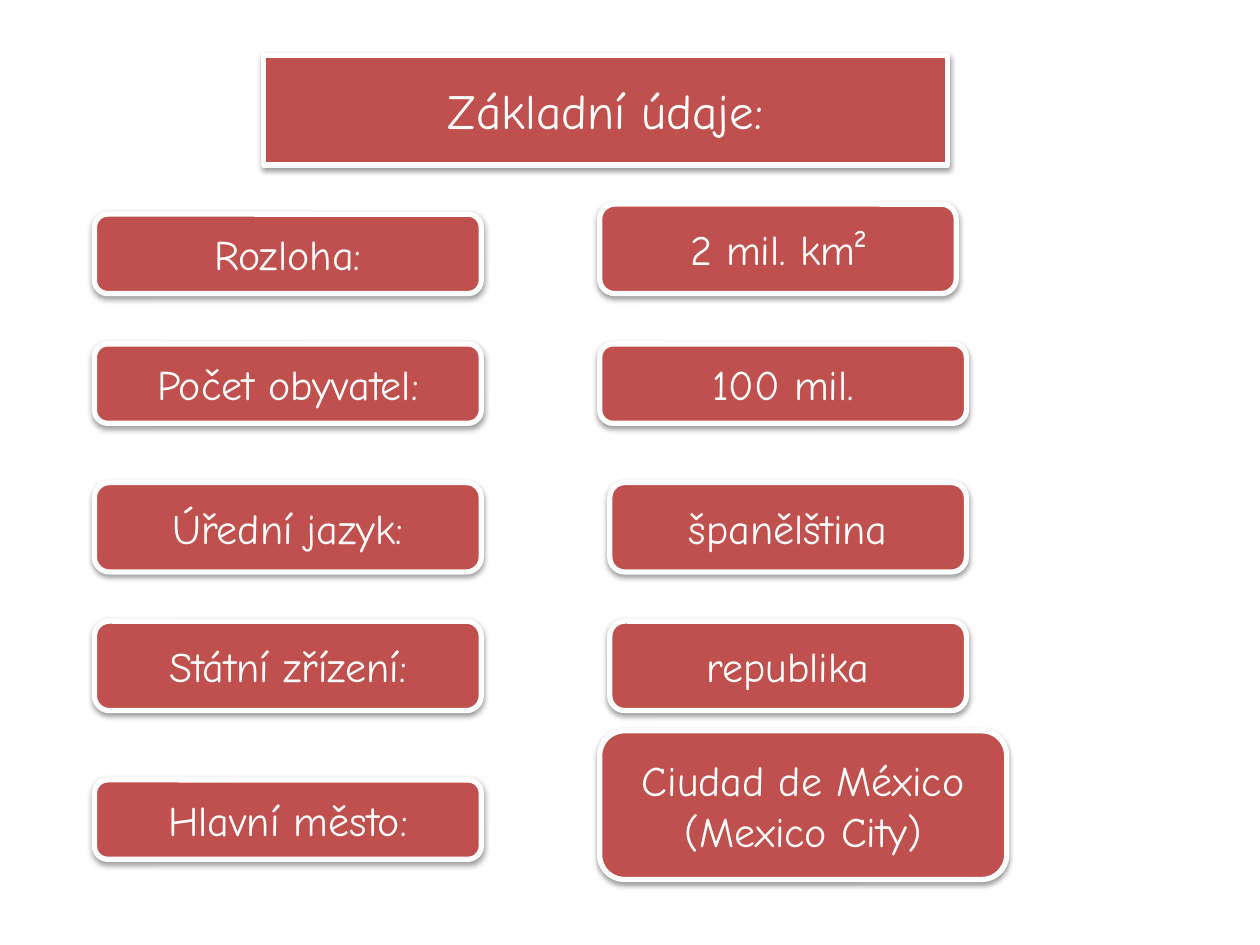
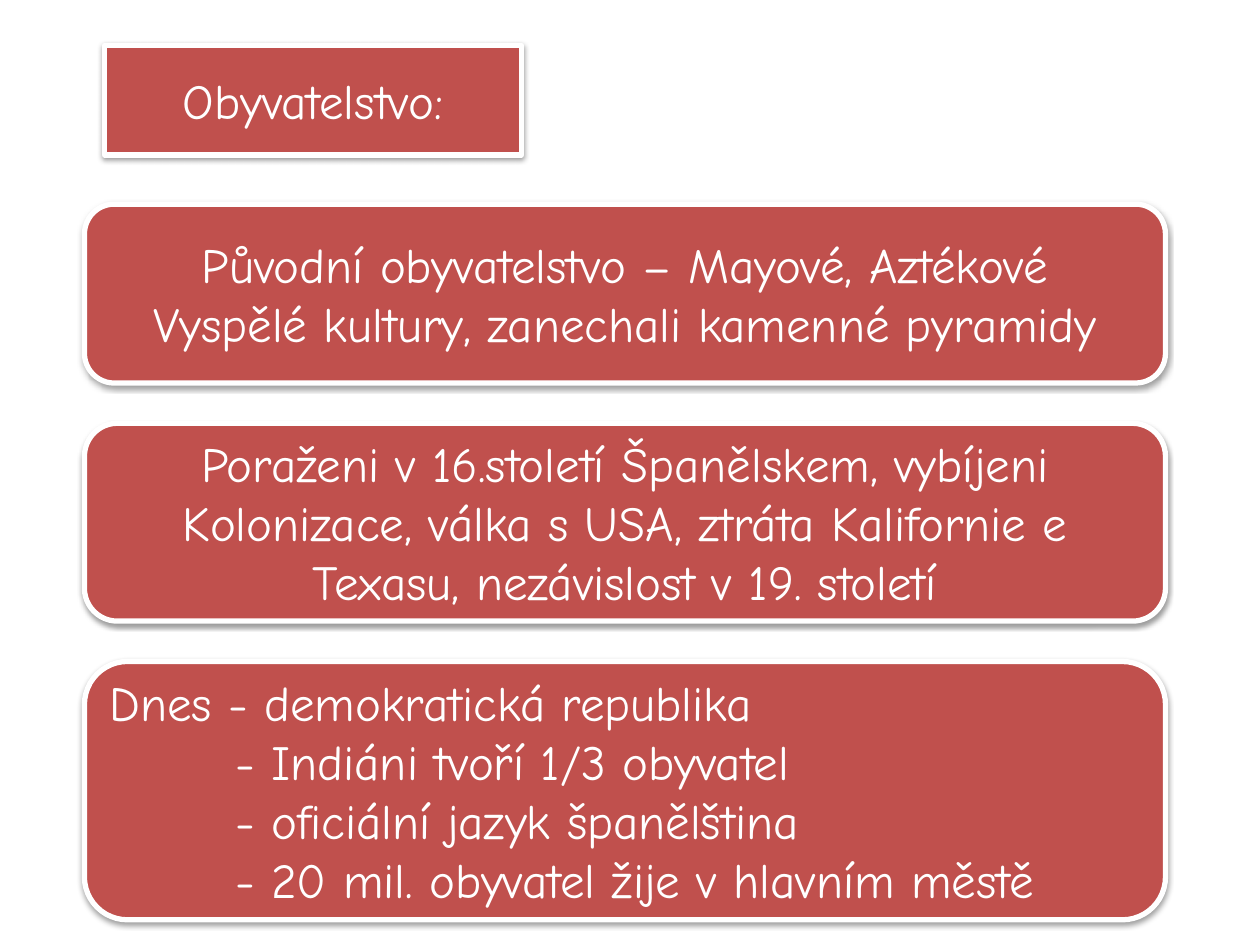
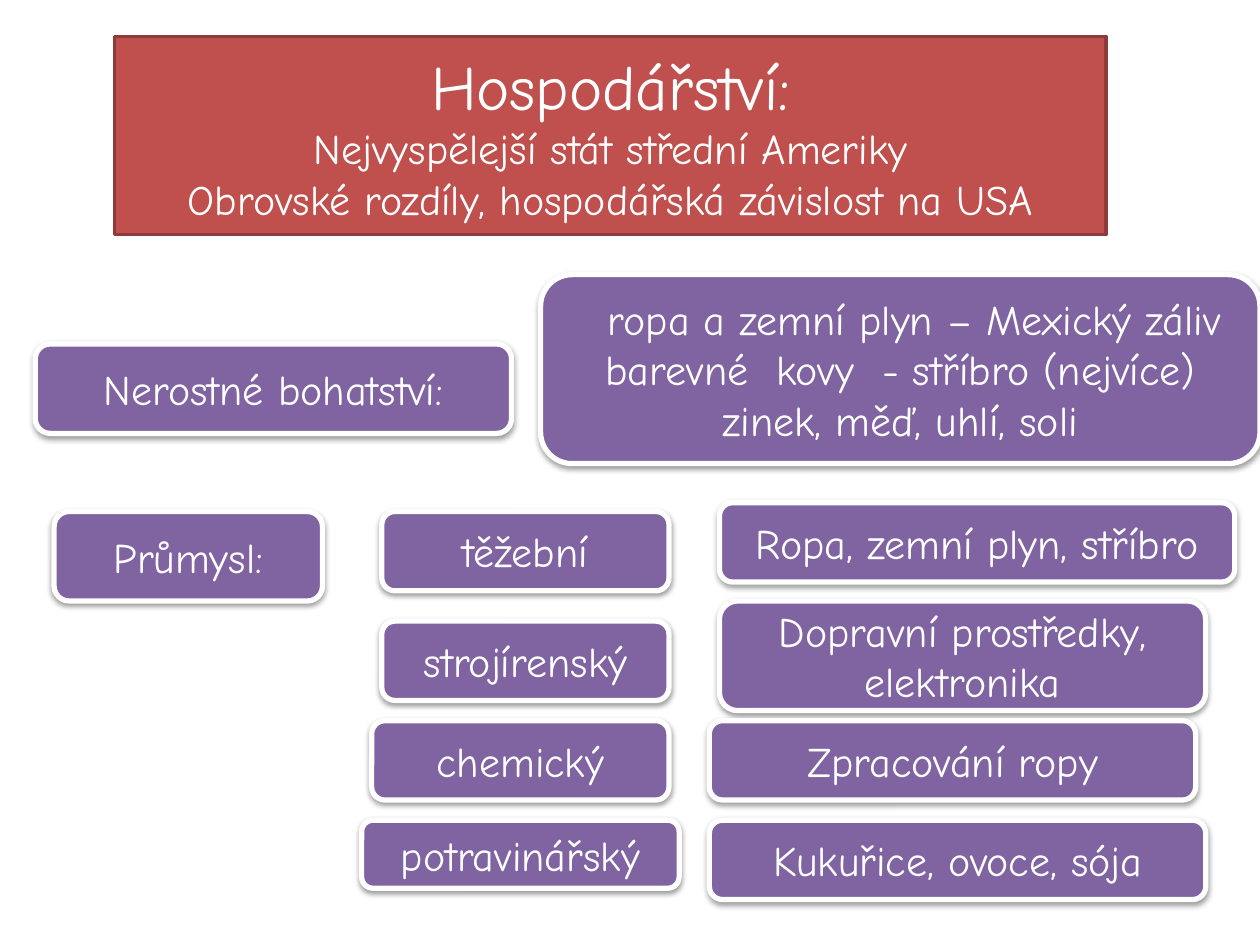
"""Build three slides of rounded cards about the geography of Mexico."""
import lxml.etree
import pptx
import pptx.dml.color
import pptx.enum.shapes
import pptx.enum.text
import pptx.oxml.ns
import pptx.util

Inches, Pt = pptx.util.Inches, pptx.util.Pt
qn = pptx.oxml.ns.qn
CENTER, LEFT = pptx.enum.text.PP_ALIGN.CENTER, pptx.enum.text.PP_ALIGN.LEFT

FONT = "Comic Neue"
RED, PURPLE, WHITE, DARK_RED = "C0504D", "8064A2", "FFFFFF", "8E3B39"
LABEL_SIZE, HEADING_SIZE, LEAD_SIZE = 24, 28, 36

FACTS_TITLE = ("Základní údaje:", (2.09, 0.44, 5.43, 0.87))
LABEL_LEFT, LABEL_WIDTH = 0.75, 3.07
FACTS = [
    ("Rozloha:", 1.7, 0.63, "2 mil. km²", (4.76, 1.62, 2.83, 0.71)),
    ("Počet obyvatel:", 2.73, 0.63, "100 mil.", (4.76, 2.73, 2.91, 0.63)),
    ("Úřední jazyk:", 3.83, 0.71, "španělština", (4.84, 3.83, 2.83, 0.71)),
    ("Státní zřízení:", 4.93, 0.71, "republika", (4.84, 4.93, 2.83, 0.71)),
    ("Hlavní město:", 6.19, 0.63, "Ciudad de México\n(Mexico City)", (4.76, 5.8, 3.23, 1.18)),
]

PEOPLE_TITLE = ("Obyvatelstvo:", (0.83, 0.36, 3.31, 0.87))
ERA_LEFT, ERA_WIDTH, ERA_GAP, ERA_TOP = 0.67, 8.58, 0.32, 1.62
HISTORY = [
    ("Původní obyvatelstvo – Mayové, Aztékové\n"
     "Vyspělé kultury, zanechali kamenné pyramidy", 1.42, {}),
    ("Poraženi v 16.století Španělskem, vybíjeni\n"
     "Kolonizace, válka s USA, ztráta Kalifornie e Texasu, nezávislost v 19. století", 1.57, {}),
    ("Dnes - demokratická republika\n"
     "- Indiáni tvoří 1/3 obyvatel\n"
     "- oficiální jazyk španělština\n"
     "- 20 mil. obyvatel žije v hlavním městě", 2.05, {"align": LEFT, "later_margin": 1}),
]

ECONOMY_TITLE = ("Hospodářství:\n"
                 "Nejvyspělejší stát střední Ameriky\n"
                 "Obrovské rozdíly, hospodářská závislost na USA", (0.91, 0.29, 7.87, 1.57))
RESOURCES = ("Nerostné bohatství:", (0.28, 2.73, 3.78, 0.71))
MINERALS = ("ropa a zemní plyn – Mexický záliv barevné  kovy  - stříbro (nejvíce)\n"
            "zinek, měď, uhlí, soli", (4.29, 2.18, 5.71, 1.5))
INDUSTRY = ("Průmysl:", (0.43, 4.06, 2.13, 0.71))
BRANCHES = [
    ("těžební", (3.03, 4.06, 2.28, 0.63)),
    ("Ropa, zemní plyn, stříbro", (5.71, 3.99, 4.09, 0.63)),
    ("strojírenský", (3.03, 4.93, 2.28, 0.63)),
    ("Dopravní prostředky, elektronika", (5.71, 4.77, 3.86, 0.87)),
    ("chemický", (2.95, 5.72, 2.36, 0.63)),
    ("Zpracování ropy", (5.63, 5.72, 3.86, 0.63)),
    ("potravinářský", (2.87, 6.51, 2.52, 0.54)),
    ("Kukuřice, ovoce, sója", (5.63, 6.51, 3.94, 0.63)),
]


def rgb(value):
    """Turn a hex string into a colour."""
    return pptx.dml.color.RGBColor.from_string(value)


def cast_shadow(card):
    """Give a card a soft shadow straight below it."""
    effects = card._element.spPr.find(qn("a:effectLst"))
    shadow = lxml.etree.SubElement(effects, qn("a:outerShdw"), blurRad="40000", dist="20000",
                                   dir="5400000", rotWithShape="0")
    colour = lxml.etree.SubElement(shadow, qn("a:srgbClr"), val="000000")
    lxml.etree.SubElement(colour, qn("a:alpha"), val="38000")


def paint(card, fill, border=WHITE, border_width=3):
    """Fill and outline a card; white borders come with a shadow."""
    card.fill.solid()
    card.fill.fore_color.rgb = rgb(fill)
    card.line.color.rgb = rgb(border)
    card.line.width = Pt(border_width)
    card.shadow.inherit = False
    if border == WHITE:
        cast_shadow(card)


def write(card, text, size, first_size=None, align=CENTER, first_indent=0, later_margin=0):
    """Write one paragraph per line, vertically centred in the card."""
    frame = card.text_frame
    frame.word_wrap = True
    frame.auto_size = pptx.enum.text.MSO_AUTO_SIZE.NONE
    frame.vertical_anchor = pptx.enum.text.MSO_ANCHOR.MIDDLE
    frame.text = text
    for number, paragraph in enumerate(frame.paragraphs):
        first = number == 0
        paragraph.alignment = align
        properties = paragraph._p.get_or_add_pPr()
        properties.set("marL", str(0 if first else Inches(later_margin)))
        properties.set("indent", str(Inches(first_indent) if first else 0))
        paragraph.font.name = FONT
        paragraph.font.size = Pt(first_size if first and first_size else size)
        paragraph.font.color.rgb = rgb(WHITE)


def add_card(slide, text, box, fill=RED, size=LABEL_SIZE, **style):
    """Add a rounded card with text."""
    card = slide.shapes.add_shape(pptx.enum.shapes.MSO_SHAPE.ROUNDED_RECTANGLE,
                                  *map(Inches, box))
    paint(card, fill)
    write(card, text, size, **style)


def add_titled_slide(deck, text, box, size=HEADING_SIZE, first_size=None, **border):
    """Add a slide whose title is a rounded red card."""
    slide = deck.slides.add_slide(deck.slide_layouts[5])
    title = slide.shapes.title
    title.left, title.top, title.width, title.height = map(Inches, box)
    outline = lxml.etree.Element(qn("a:prstGeom"), prst="roundRect")
    lxml.etree.SubElement(outline, qn("a:avLst"))
    title._element.spPr.insert(1, outline)
    paint(title, RED, **border)
    write(title, text, size, first_size)
    return slide


def main():
    """Build and save the deck."""
    deck = pptx.Presentation()
    deck.slide_width, deck.slide_height = Inches(10), Inches(7.5)

    facts = add_titled_slide(deck, *FACTS_TITLE)
    for label, top, height, value, value_box in FACTS:
        add_card(facts, label, (LABEL_LEFT, top, LABEL_WIDTH, height))
        add_card(facts, value, value_box)

    people = add_titled_slide(deck, *PEOPLE_TITLE)
    top = ERA_TOP
    for text, height, style in HISTORY:
        add_card(people, text, (ERA_LEFT, top, ERA_WIDTH, height), size=HEADING_SIZE, **style)
        top += height + ERA_GAP

    economy = add_titled_slide(deck, *ECONOMY_TITLE, size=LABEL_SIZE, first_size=LEAD_SIZE,
                               border=DARK_RED, border_width=2)
    add_card(economy, *MINERALS, fill=PURPLE, first_indent=0.22)
    for text, box in [RESOURCES, INDUSTRY, *BRANCHES]:
        add_card(economy, text, box, fill=PURPLE)

    deck.save("out.pptx")


if __name__ == "__main__":
    main()
